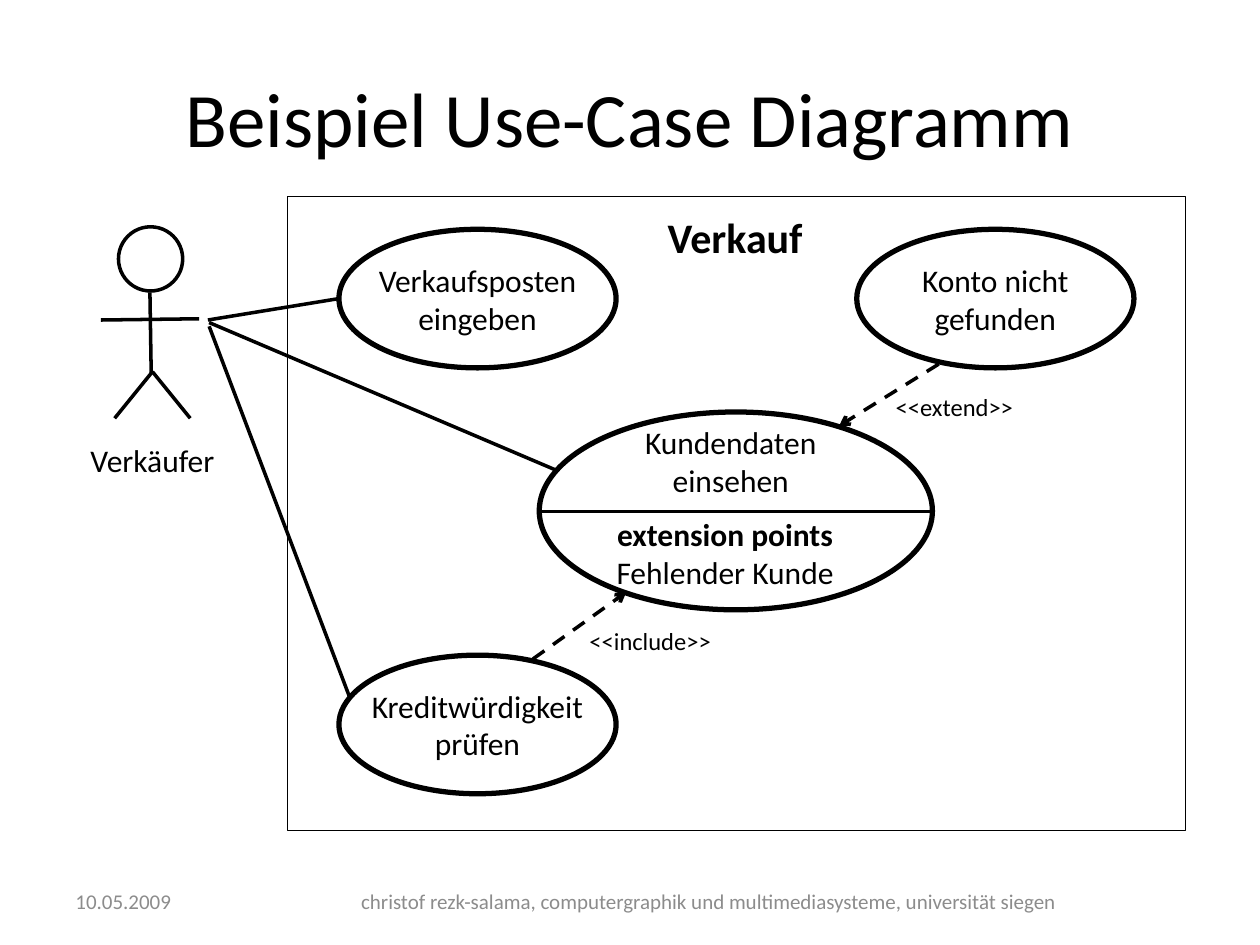
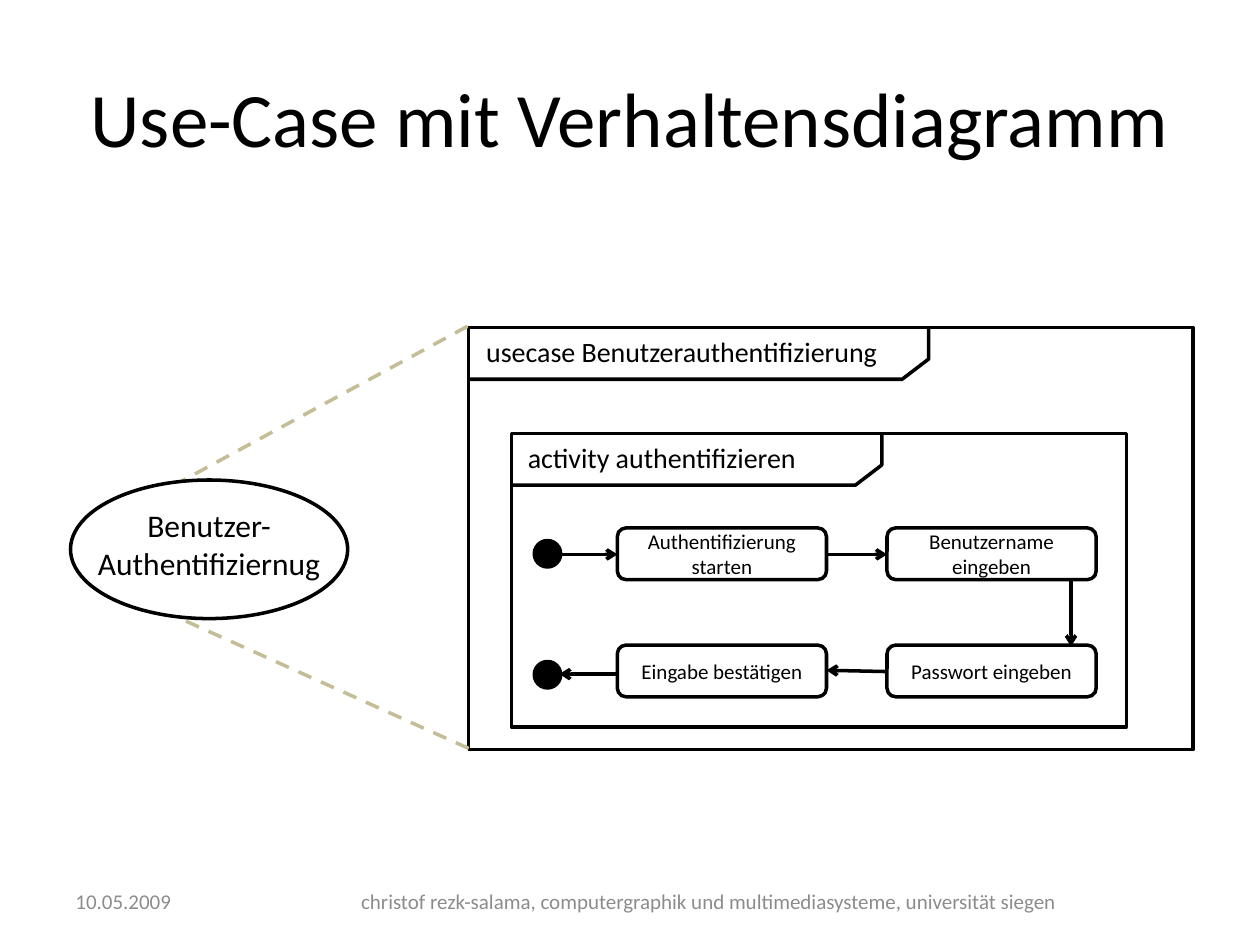
from lxml import etree
from pptx import Presentation
from pptx.dml.color import RGBColor
from pptx.enum.dml import MSO_LINE
from pptx.enum.shapes import MSO_CONNECTOR, MSO_SHAPE
from pptx.enum.text import MSO_ANCHOR, PP_ALIGN
from pptx.oxml.ns import qn
from pptx.util import Inches, Pt

LEFT, MID = PP_ALIGN.LEFT, PP_ALIGN.CENTER
TOP, CENTER = MSO_ANCHOR.TOP, MSO_ANCHOR.MIDDLE
OVAL, DISC = MSO_SHAPE.OVAL, MSO_SHAPE.FLOWCHART_CONNECTOR
RECT, ROUND = MSO_SHAPE.RECTANGLE, MSO_SHAPE.ROUNDED_RECTANGLE
STRAIGHT, DASH = MSO_CONNECTOR.STRAIGHT, MSO_LINE.DASH

FONT = "Calibri"
COLORS = {"ink": "000000", "paper": "FFFFFF", "grey": "8C8C8C", "sand": "C4BD97"}
FOOTER = [
    ((0.5, 6.95, 1.92, 0.4), "10.05.2009", LEFT),
    ((2.5, 6.95, 6.25, 0.4),
     "christof rezk-salama, computergraphik und multimediasysteme, universität siegen", MID),
]
CASE = (2.2, 1.1)    # size of a use case oval
STEP = (1.66, 0.41)  # size of an activity step

# Use case diagram
ACTOR = [
    ((1.19, 2.32), (1.2, 2.96)),
    ((0.8, 2.54), (1.58, 2.53)),
    ((1.21, 2.95), (1.51, 3.32)),
    ((1.21, 2.95), (0.91, 3.32)),
]
CASES = [
    ((2.69, 1.82), ["Verkaufsposten", "eingeben"]),
    ((6.8, 1.82), ["Konto nicht", "gefunden"]),
    ((2.69, 5.2), ["Kreditwürdigkeit", "prüfen"]),
]
RELATIONS = [
    ((4.23, 5.23), (4.97, 4.7), (4.58, 4.92, 1.18, 0.34), "<<include>>"),
    ((7.45, 2.89), (6.66, 3.38), (7.01, 3.06, 1.15, 0.34), "<<extend>>"),
]
LINKS = [
    ((2.69, 2.37), (1.65, 2.54)),
    ((1.66, 2.56), (4.41, 3.73)),
    ((2.77, 5.52), (1.66, 2.59)),
]

# Behaviour diagram: frame, tab width, label box, label
FRAMES = [
    ((3.72, 2.6, 5.75, 3.35), 3.65, (3.76, 2.61, 3.72, 0.37),
     "usecase Benutzerauthentifizierung"),
    ((4.06, 3.44, 4.88, 2.33), 2.94, (4.09, 3.45, 3.72, 0.37),
     "activity authentifizieren"),
]
COLS, ROWS = (4.9, 7.04), (4.19, 5.12)
STEPS = [
    ["Authentifizierung starten", "Benutzername eingeben"],
    ["Eingabe bestätigen", "Passwort eingeben"],
]
DOTS = [(4.24, 4.29), (4.24, 5.25)]
FLOWS = [
    ((4.44, 4.4), (4.9, 4.4)),
    ((6.56, 4.4), (7.04, 4.4)),
    ((8.5, 4.6), (8.5, 5.13)),
    ((7.04, 5.33), (6.56, 5.32)),
    ((4.9, 5.35), (4.44, 5.35)),
]
ZOOM = [((3.71, 2.59), (1.44, 3.82)), ((3.72, 5.94), (1.41, 4.9))]


def rgb(name):
    return RGBColor.from_string(COLORS[name])


def inch(values):
    return [Inches(v) for v in values]


def write(frame, lines, size=18, color="ink", align=MID, anchor=TOP, wrap=False, bold=()):
    """Fill a text frame; bold holds the numbers of the bold lines."""
    frame.word_wrap = wrap
    frame.vertical_anchor = anchor
    for i, line in enumerate(lines):
        para = frame.paragraphs[0] if i == 0 else frame.add_paragraph()
        para.alignment = align
        run = para.add_run()
        run.text = line
        font = run.font
        font.name, font.size, font.bold = FONT, Pt(size), i in bold
        font.color.rgb = rgb(color)


def label(slide, box, lines, **style):
    write(slide.shapes.add_textbox(*inch(box)).text_frame, lines, **style)


def outline(shape, width, fill=None):
    shape.shadow.inherit = False
    if fill:
        shape.fill.solid()
        shape.fill.fore_color.rgb = rgb(fill)
    else:
        shape.fill.background()
    shape.line.color.rgb = rgb("ink")
    shape.line.width = Pt(width)


def draw(slide, kind, box, width=2, fill=None):
    shape = slide.shapes.add_shape(kind, *inch(box))
    outline(shape, width, fill)
    return shape


def link(slide, start, end, color="ink", dash=False, arrow=False):
    line = slide.shapes.add_connector(STRAIGHT, *inch(start + end))
    line.line.color.rgb = rgb(color)
    line.line.width = Pt(2)
    if dash:
        line.line.dash_style = DASH
    if arrow:
        tail = etree.SubElement(line.line._get_or_add_ln(), qn("a:tailEnd"))
        tail.set("type", "arrow")
    etree.SubElement(line._element.spPr, qn("a:effectLst"))


def case(slide, spot, lines, width=3, rise=0.0):
    """Draw a use case oval with its label, lifted by rise, in the middle."""
    x, y = spot
    w, h = CASE
    draw(slide, OVAL, (x, y, w, h), width, "paper")
    label(slide, (x + 0.1, y + h / 2 - 0.35 - rise, w - 0.2, 0.71), lines)


def tab(slide, box, width):
    """Draw the cut-corner name tab of a frame."""
    x, y = box[:2]
    right, foot = x + width, y + 0.41
    points = [(x, foot), (right - 0.21, foot), (right, foot - 0.16), (right, y)]
    points = [tuple(inch(p)) for p in points]
    pen = slide.shapes.build_freeform(*points[0])
    pen.add_line_segments(points[1:], close=False)
    outline(pen.convert_to_shape(), 2)


def start(deck, title):
    """Add a slide with its title and footer."""
    slide = deck.slides.add_slide(deck.slide_layouts[5])
    head = slide.shapes.title
    head.left, head.top, head.width, head.height = inch((0.5, 0.3, 9, 1.25))
    write(head.text_frame, [title], size=44, anchor=CENTER, wrap=True)
    for box, line, align in FOOTER:
        label(slide, box, [line], size=12, color="grey", align=align,
              anchor=CENTER, wrap=True)
    return slide


def sales(deck):
    slide = start(deck, "Beispiel Use-Case Diagramm")
    draw(slide, DISC, (0.94, 1.8, 0.51, 0.51), fill="paper")
    for a, b in ACTOR:
        link(slide, a, b)
    for spot, lines in CASES:
        case(slide, spot, lines)
    draw(slide, OVAL, (4.28, 3.27, 3.12, 1.57), 3, "paper")
    label(slide, (4.78, 4.04, 1.95, 0.71), ["extension points", "Fehlender Kunde"], bold=(0,))
    label(slide, (5.01, 3.31, 1.58, 0.71), ["Kundendaten", "einsehen"])
    link(slide, (4.28, 4.06), (7.41, 4.06))
    for a, b, box, name in RELATIONS:
        link(slide, a, b, dash=True, arrow=True)
        label(slide, box, [name], size=14, align=LEFT)
    draw(slide, RECT, (2.28, 1.56, 7.13, 5.03), 0.25)
    for a, b in LINKS:
        link(slide, a, b)
    label(slide, (5.2, 1.63, 1.28, 0.5), ["Verkauf"], size=24, align=LEFT, bold=(0,))
    label(slide, (0.62, 3.45, 1.2, 0.4), ["Verkäufer"], align=LEFT)


def login(deck):
    slide = start(deck, "Use-Case mit Verhaltensdiagramm")
    for box, width, spot, name in FRAMES:
        draw(slide, RECT, box)
        tab(slide, box, width)
        label(slide, spot, [name], size=16, align=LEFT, wrap=True)
    for y, names in zip(ROWS, STEPS):
        for x, name in zip(COLS, names):
            step = draw(slide, ROUND, (x, y) + STEP)
            write(step.text_frame, [name], size=12, anchor=CENTER, wrap=True)
    for spot in DOTS:
        draw(slide, DISC, spot + (0.21, 0.21), fill="ink")
    for a, b in FLOWS:
        link(slide, a, b, arrow=True)
    for a, b in ZOOM:
        link(slide, a, b, color="sand", dash=True)
    case(slide, (0.56, 3.81), ["Benutzer-", "Authentifiziernug"], width=2, rise=0.04)


def main():
    deck = Presentation()
    deck.slide_width, deck.slide_height = inch((10, 7.5))
    sales(deck)
    login(deck)
    deck.save("out.pptx")


if __name__ == "__main__":
    main()
